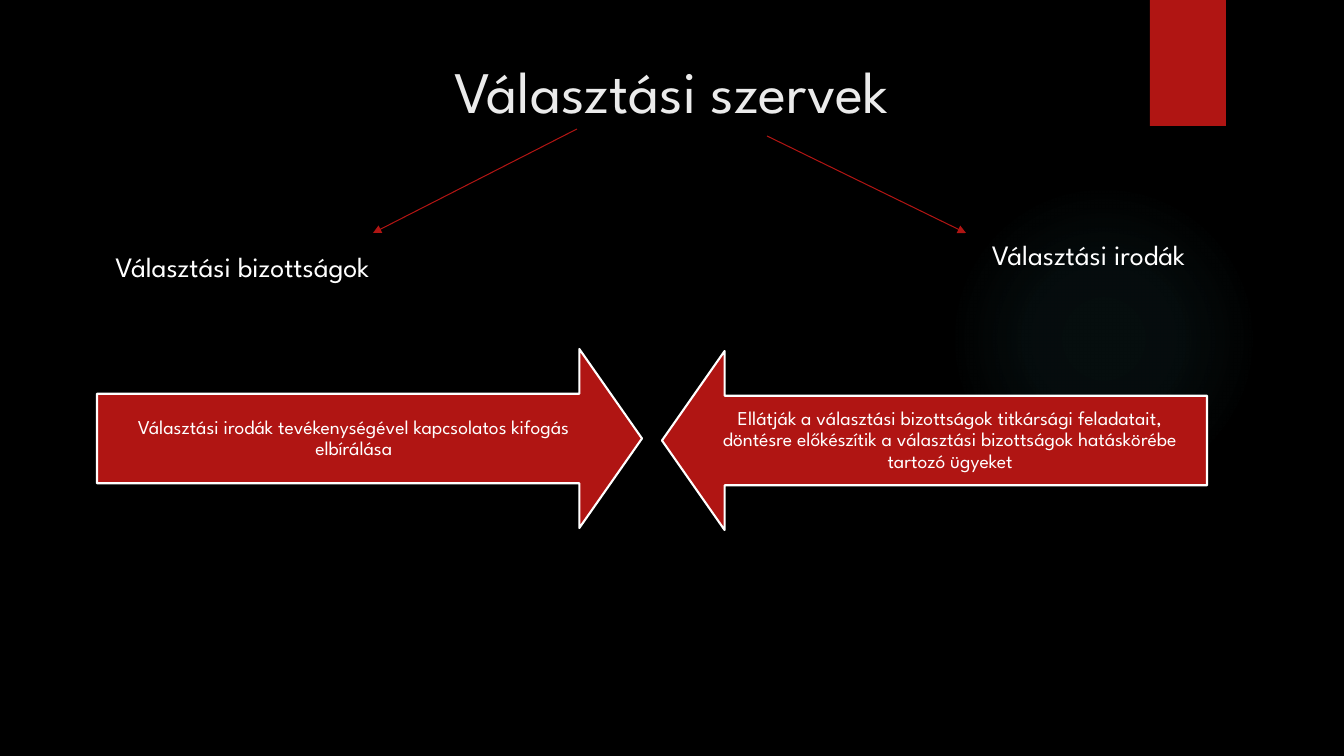
from pptx import Presentation
from pptx.dml.color import RGBColor
from pptx.enum.shapes import MSO_CONNECTOR, MSO_SHAPE
from pptx.enum.text import MSO_ANCHOR, MSO_AUTO_SIZE, PP_ALIGN
from pptx.oxml import parse_xml
from pptx.oxml.ns import nsdecls, qn
from pptx.oxml.xmlchemy import OxmlElement
from pptx.util import Pt

COLORS = {"back": "000000", "red": "B01513", "white": "FFFFFF",
          "title": "EBEBEB", "glow": "50B9C1"}
FONT = "League Spartan"
EMU_PER_PX = 914400 / 100.8


def px(*values):
    return [round(v * EMU_PER_PX) for v in values]


def rgb(name):
    return RGBColor.from_string(COLORS[name])


class Deck:
    """Draws styled elements on the current slide."""

    def __init__(self, width, height):
        self.prs = Presentation()
        self.prs.slide_width, self.prs.slide_height = px(width, height)
        self.s = None

    def slide(self):
        self.s = self.prs.slides.add_slide(self.prs.slide_layouts[5])
        self.s.background.fill.solid()
        self.s.background.fill.fore_color.rgb = rgb("back")

    def set_text(self, tf, text, size, color="white", inset=(10, 5),
                 anchor=MSO_ANCHOR.TOP, spacing=1.0):
        tf.word_wrap = True
        tf.auto_size = MSO_AUTO_SIZE.NONE
        tf.vertical_anchor = anchor
        tf.margin_left, tf.margin_top = px(*inset)
        tf.margin_right, tf.margin_bottom = px(*inset)
        p = tf.paragraphs[0]
        p.alignment = PP_ALIGN.CENTER
        p.line_spacing = spacing
        p.space_before = Pt(0)
        r = p.add_run()
        r.text = text
        r.font.name = FONT
        r.font.size = Pt(size)
        r.font.color.rgb = rgb(color)

    def title(self, box, text):
        sp = self.s.shapes.title
        sp.left, sp.top, sp.width, sp.height = px(*box)
        self.set_text(sp.text_frame, text, 42, "title")

    def label(self, box, text):
        sp = self.s.shapes.add_textbox(*px(*box))
        self.set_text(sp.text_frame, text, 20)

    def shape(self, kind, box, fill="red"):
        sp = self.s.shapes.add_shape(kind, *px(*box))
        sp.shadow.inherit = False
        sp.fill.solid()
        sp.fill.fore_color.rgb = rgb(fill)
        sp.line.fill.background()
        return sp

    def glow(self, box, stops):
        sp = self.shape(MSO_SHAPE.OVAL, box, "glow")
        gs = "".join(
            f'<a:gs pos="{pos * 1000}"><a:srgbClr val="{COLORS["glow"]}">'
            f'<a:alpha val="{alpha * 1000}"/></a:srgbClr></a:gs>'
            for pos, alpha in stops)
        grad = parse_xml(
            f'<a:gradFill {nsdecls("a")}><a:gsLst>{gs}</a:gsLst>'
            '<a:path path="circle"><a:fillToRect l="50000" t="50000" '
            'r="50000" b="50000"/></a:path></a:gradFill>')
        spPr = sp._element.spPr
        spPr.replace(spPr.find(qn("a:solidFill")), grad)

    def block_arrow(self, kind, box, text):
        sp = self.shape(kind, box)
        sp.adjustments[0], sp.adjustments[1] = 0.5, 0.35
        sp.line.color.rgb = rgb("white")
        sp.line.width = Pt(1.5)
        self.set_text(sp.text_frame, text, 14, inset=(11, 11),
                      anchor=MSO_ANCHOR.MIDDLE, spacing=0.9)

    def pointer(self, start, end):
        c = self.s.shapes.add_connector(MSO_CONNECTOR.STRAIGHT, *px(*start, *end))
        c.line.color.rgb = rgb("red")
        c.line.width = Pt(0.75)
        tail = OxmlElement("a:tailEnd")
        tail.set("type", "triangle")
        c._element.spPr.find(qn("a:ln")).append(tail)
        c._element.spPr.append(OxmlElement("a:effectLst"))


def main():
    deck = Deck(1344, 756)
    deck.slide()
    deck.glow((949, 184, 310, 310), [(0, 7), (36, 6), (69, 0), (100, 0)])
    deck.shape(MSO_SHAPE.RECTANGLE, (1150, 0, 76, 126))
    deck.title((153, 50, 1037, 154), "Választási szervek")
    deck.label((0, 245, 485, 63), "Választási bizottságok")
    deck.label((846, 233, 485, 63), "Választási irodák")
    deck.pointer((577, 129), (373, 233))
    deck.pointer((767, 136), (966, 233))
    deck.block_arrow(
        MSO_SHAPE.RIGHT_ARROW, (97, 349, 545, 179),
        "Választási irodák tevékenységével kapcsolatos kifogás elbírálása")
    deck.block_arrow(
        MSO_SHAPE.LEFT_ARROW, (662, 351, 545, 179),
        "Ellátják a választási bizottságok titkársági feladatait, döntésre "
        "előkészítik a választási bizottságok hatáskörébe tartozó ügyeket")
    deck.prs.save("out.pptx")


if __name__ == "__main__":
    main()
